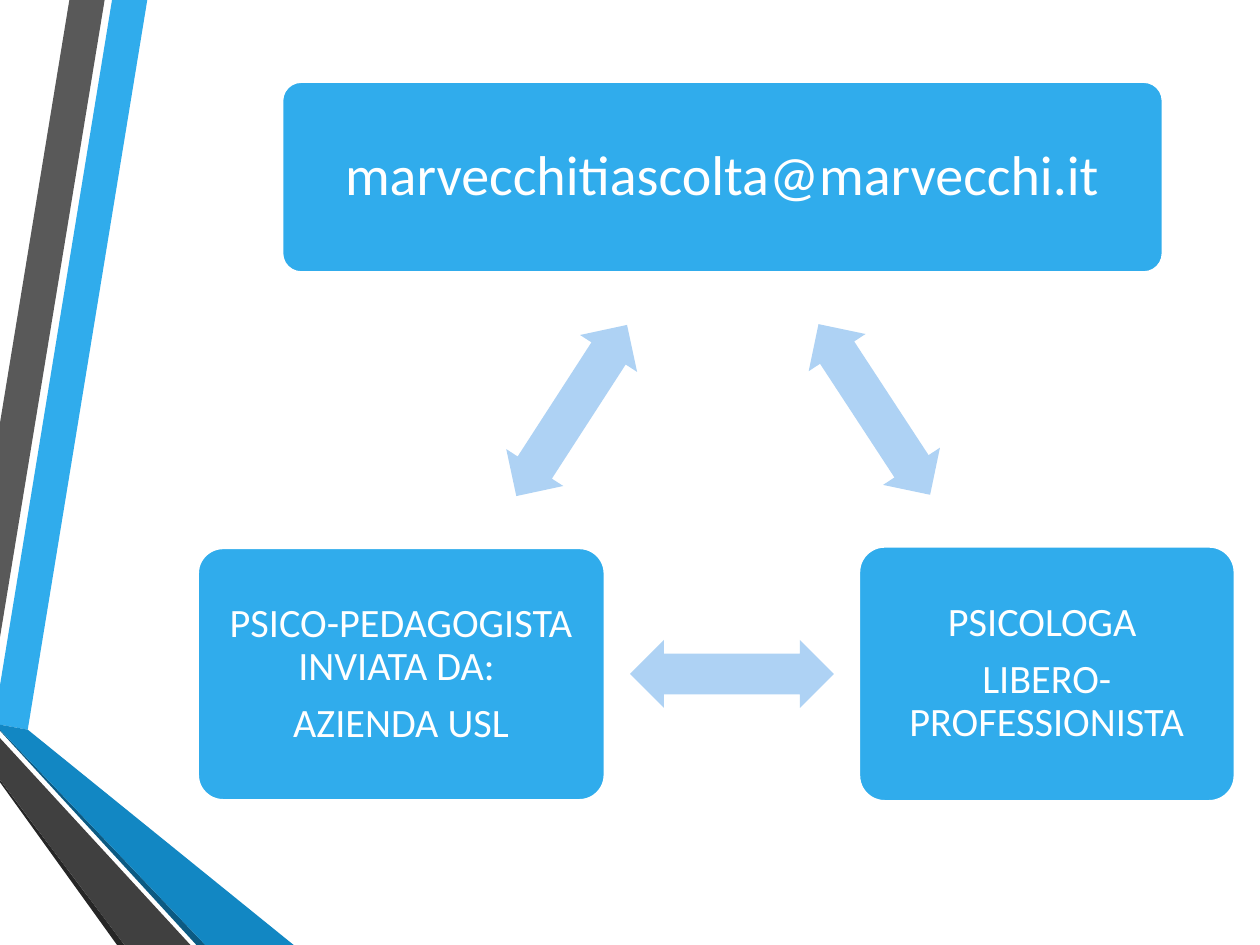
from pptx import Presentation
from pptx.dml.color import RGBColor
from pptx.enum.shapes import MSO_SHAPE
from pptx.enum.text import MSO_ANCHOR, PP_ALIGN
from pptx.util import Cm, Pt

WHITE = RGBColor(0xFF, 0xFF, 0xFF)
SKY = RGBColor(0x30, 0xAC, 0xEC)
PALE = RGBColor(0xAE, 0xD2, 0xF4)
GREY = RGBColor(0x59, 0x59, 0x59)
BLACK = RGBColor(0x26, 0x26, 0x26)
NAVY = RGBColor(0x0C, 0x5A, 0x82)
DEEP = RGBColor(0x12, 0x87, 0xC3)
DARK = RGBColor(0x40, 0x40, 0x40)

ROUND = MSO_SHAPE.ROUNDED_RECTANGLE
ARROW = MSO_SHAPE.LEFT_RIGHT_ARROW
MIDDLE = MSO_ANCHOR.MIDDLE
CENTER = PP_ALIGN.CENTER

PARA = {"alignment": CENTER, "line_spacing": 0.9, "space_after": Pt(7.5)}
FONT = {"name": "Calibri"}

BANDS = [
    (SKY, [(0, 13.82), (0, 14.61), (0.56, 14.71), (2.97, 0), (2.26, 0)]),
    (GREY, [(2.11, 0), (1.4, 0), (0, 8.53), (0, 12.85)]),
    (BLACK, [(0, 15.72), (0, 15.77), (2.36, 19.05), (2.51, 19.05)]),
    (NAVY, [(0, 14.71), (0, 14.73), (3.96, 19.05), (4.14, 19.05)]),
    (DEEP, [(0, 14.71), (4.14, 19.05), (5.92, 19.05), (0.56, 14.71),
            (0, 14.61)]),
    (DARK, [(0, 15.72), (2.51, 19.05), (3.84, 19.05), (0, 14.88)]),
]
CARDS = [
    ((1.7, 0, 17.75, 3.84), 32, 0.35, ["marvecchitiascolta@marvecchi.it"]),
    ((13.33, 9.37, 7.57, 5.13), 23, 0.26,
     ["PSICOLOGA ", "LIBERO- PROFESSIONISTA"]),
    ((0, 9.4, 8.2, 5.08), 23, 0.26,
     ["PSICO-PEDAGOGISTA INVIATA DA: ", "AZIENDA USL"]),
]
ARROWS = [(11.58, 5.92, 56.8), (8.71, 11.25, 180), (5.48, 5.94, 302.9)]


def apply(item, values):
    """Set attributes of an item from a dict."""
    for name, value in values.items():
        setattr(item, name, value)


def paint(shape, color):
    """Give a shape a flat fill with no line or shadow."""
    shape.shadow.inherit = False
    shape.fill.solid()
    shape.fill.fore_color.rgb = color
    shape.line.fill.background()


def add_bands(slide, left, top):
    """Draw the slanted bands from a top left corner."""
    for color, points in BANDS:
        spots = [(Cm(left + x), Cm(top + y)) for x, y in points]
        form = slide.shapes.build_freeform(*spots[0])
        form.add_line_segments(spots[1:], close=True)
        paint(form.convert_to_shape(), color)


def add_card(slide, box, size, inset, lines):
    """Draw a rounded card with centred lines in a box."""
    card = slide.shapes.add_shape(ROUND, *map(Cm, box))
    card.adjustments[0] = 0.1
    paint(card, SKY)
    card.line.color.rgb = WHITE
    card.line.width = Pt(1.25)
    frame = card.text_frame
    sides = ("left", "top", "right", "bottom")
    apply(frame, {f"margin_{side}": Cm(inset) for side in sides})
    apply(frame, {"word_wrap": True, "vertical_anchor": MIDDLE})
    frame.text = "\n".join(lines)
    for para in frame.paragraphs:
        apply(para, PARA)
        font = para.runs[0].font
        apply(font, {**FONT, "size": Pt(size)})
        font.color.rgb = WHITE


def add_arrow(slide, left, top, angle):
    """Draw a turned double arrow."""
    arrow = slide.shapes.add_shape(
        ARROW, Cm(left), Cm(top), Cm(4.11), Cm(1.37))
    arrow.adjustments[0] = 0.6
    arrow.adjustments[1] = 0.5
    arrow.rotation = angle
    paint(arrow, PALE)


def add_cycle(slide, left, top):
    """Draw three cards and the arrows that link them."""
    for (x, y, width, height), *rest in CARDS:
        add_card(slide, (left + x, top + y, width, height), *rest)
    for x, y, angle in ARROWS:
        add_arrow(slide, left + x, top + y, angle)


def main():
    """Build and save the slide."""
    deck = Presentation()
    deck.slide_width, deck.slide_height = Cm(25.4), Cm(19.05)
    slide = deck.slides.add_slide(deck.slide_layouts[6])
    add_bands(slide, 0, 0)
    add_cycle(slide, 3.99, 1.65)
    deck.save("out.pptx")


if __name__ == "__main__":
    main()
